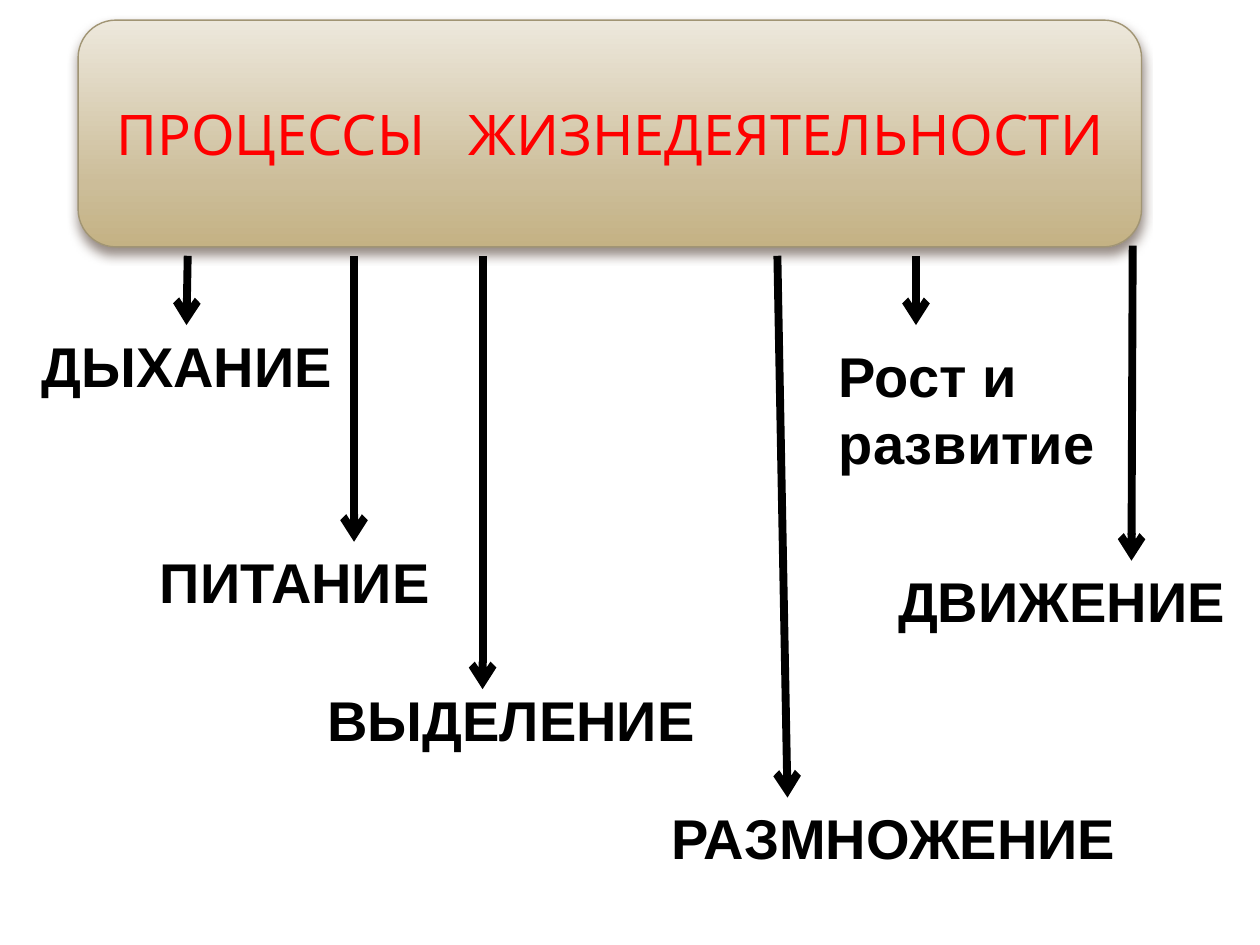
from copy import deepcopy

from lxml.etree import SubElement
from pptx import Presentation
from pptx.dml.color import RGBColor
from pptx.enum.shapes import MSO_CONNECTOR, MSO_SHAPE
from pptx.enum.text import MSO_ANCHOR, MSO_AUTO_SIZE, PP_ALIGN
from pptx.oxml.ns import qn
from pptx.util import Inches, Pt

BLACK = "000000"
PROCESSES = [
    ("ДЫХАНИЕ", (0.23, 2.58, 2.66, 0.64), (1.49, 2.03, 1.48, 2.58)),
    ("ПИТАНИЕ", (1.17, 4.3, 2.58, 0.64), (2.81, 2.03, 2.81, 4.3)),
    ("ВЫДЕЛЕНИЕ", (2.5, 5.39, 3.2, 0.64), (3.83, 2.03, 3.83, 5.47)),
    ("РАЗМНОЖЕНИЕ", (5.23, 6.33, 3.83, 0.64), (6.17, 2.03, 6.25, 6.33)),
    ("Рост и развитие", (6.56, 2.66, 3.44, 1.18), (7.27, 2.03, 7.27, 2.58)),
    ("ДВИЖЕНИЕ", (7.03, 4.45, 2.97, 0.64), (8.99, 1.95, 8.98, 4.45)),
]


def color(value):
    return RGBColor.from_string(value)


def add_text(para, text, font="Arial", size=32, fill=BLACK, bold=False, spacing=0):
    span = para.add_run()
    span.text = text
    span.font.name = font
    span.font.size = Pt(size)
    span.font.bold = bold
    span.font.color.rgb = color(fill)
    if spacing:
        span.font._element.set("spc", str(spacing * 100))


def fill_gradient(shape, stops):
    shape.fill.gradient()
    shape.fill.gradient_angle = 270
    stop_list = shape._element.spPr.find(".//" + qn("a:gsLst"))
    while len(stop_list) < len(stops):
        stop_list.append(deepcopy(stop_list[0]))
    for stop, (position, value) in zip(shape.fill.gradient_stops, stops):
        stop.position = position
        stop.color.rgb = color(value)


def add_shadow(shape, value, opacity, blur, distance):
    shape.shadow.inherit = False
    effects = shape._element.spPr.find(qn("a:effectLst"))
    shadow = SubElement(effects, qn("a:outerShdw"), blurRad=str(Pt(blur)),
                        dist=str(Pt(distance)), dir="5400000", rotWithShape="0")
    tint = SubElement(shadow, qn("a:srgbClr"), val=value)
    SubElement(tint, qn("a:alpha"), val=str(opacity * 1000))


def add_banner(page, box):
    banner = page.shapes.add_shape(MSO_SHAPE.FLOWCHART_ALTERNATE_PROCESS, *map(Inches, box))
    fill_gradient(banner, [(0, "EDE8DC"), (0.72, "CCBD99"), (1, "C4B284")])
    banner.line.color.rgb = color("A19574")
    banner.line.width = Pt(0.79)
    add_shadow(banner, "4E3B30", 60, 6, 4)
    frame = banner.text_frame
    frame.word_wrap = True
    frame.vertical_anchor = MSO_ANCHOR.MIDDLE
    para = frame.paragraphs[0]
    para.alignment = PP_ALIGN.CENTER
    for text, spacing in (("ПРОЦЕССЫ", 0), (" ", 17), ("ЖИЗНЕДЕЯТЕЛЬНОСТИ", 0)):
        add_text(para, text, font="Karla", fill="FF0000", spacing=spacing)


def add_label(page, text, box):
    frame = page.shapes.add_textbox(*map(Inches, box)).text_frame
    frame.word_wrap = True
    frame.auto_size = MSO_AUTO_SIZE.SHAPE_TO_FIT_TEXT
    add_text(frame.paragraphs[0], text, bold=True)


def add_arrow(page, ends):
    arrow = page.shapes.add_connector(MSO_CONNECTOR.STRAIGHT, *map(Inches, ends))
    arrow.line.color.rgb = color(BLACK)
    arrow.line.width = Pt(4.5)
    SubElement(arrow.line._get_or_add_ln(), qn("a:tailEnd"), type="arrow")
    SubElement(arrow._element.spPr, qn("a:effectLst"))


def main():
    deck = Presentation()
    deck.slide_width = Inches(10)
    deck.slide_height = Inches(7.5)
    page = deck.slides.add_slide(deck.slide_layouts[6])
    add_banner(page, (0.62, 0.16, 8.44, 1.8))
    for text, box, ends in PROCESSES:
        add_label(page, text, box)
        add_arrow(page, ends)
    deck.save("out.pptx")


if __name__ == "__main__":
    main()
